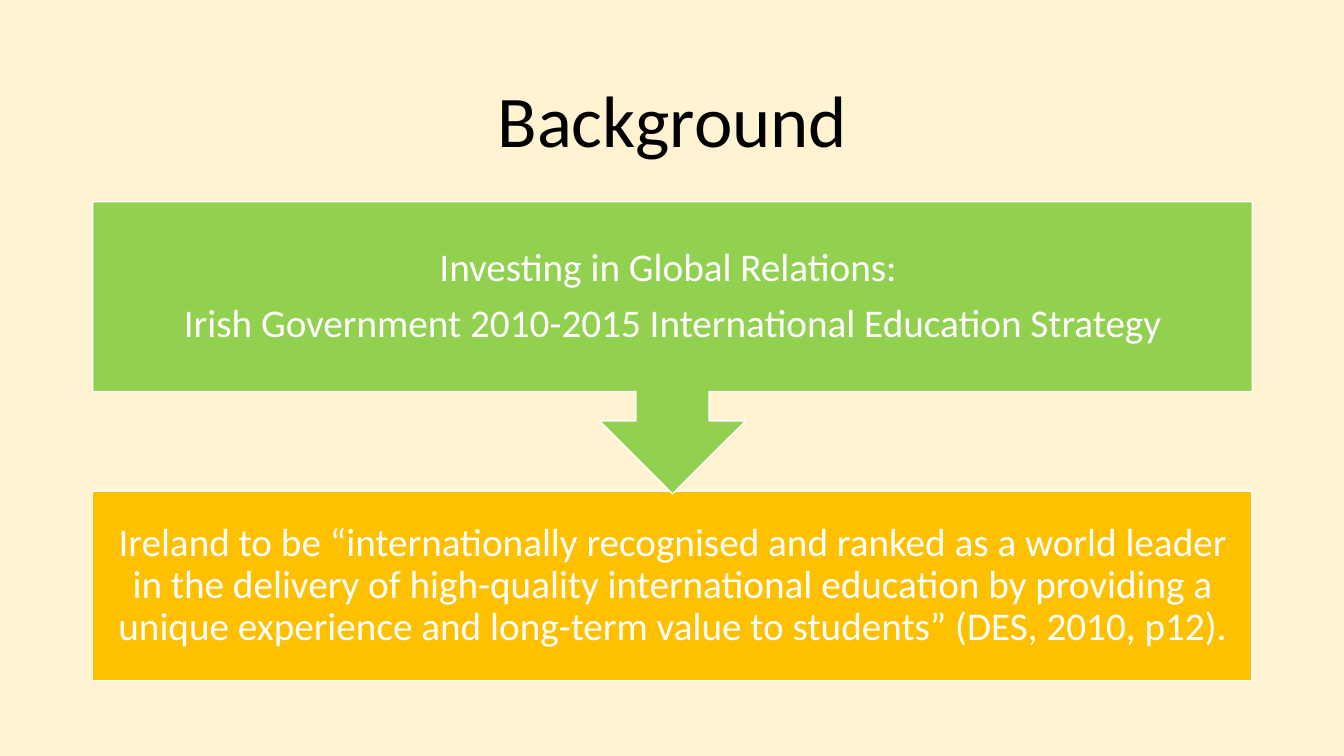
from pptx import Presentation
from pptx.dml.color import RGBColor
from pptx.enum.shapes import MSO_SHAPE as Shape
from pptx.enum.text import MSO_ANCHOR as Anchor, PP_ALIGN as Align
from pptx.util import Inches, Pt

FONT = "Calibri"
LEFT, WIDTH = 0.92, 11.5
STRATEGY_TOP, GOAL_TOP = 2, 4.87
PANEL_HEIGHT, CALLOUT_HEIGHT = 1.88, 2.9
CREAM, GREEN, AMBER = "FFF3D1", "92D050", "FFC000"
BLACK, WHITE = "000000", "FFFFFF"

STRATEGY = [
    "Investing in Global Relations: ",
    "Irish Government 2010-2015 International Education Strategy",
]
GOAL = [
    "Ireland to be “internationally recognised and ranked as a world leader "
    "in the delivery of high-quality international education by providing a "
    "unique experience and long-term value to students” (DES, 2010, p12). ",
]


def paint(fill, color):
    """Give a fill one solid colour."""
    fill.solid()
    fill.fore_color.rgb = RGBColor.from_string(color)


def add_panel(page, preset, top, height, color, rotation=0):
    """Add a full-width filled shape with a thin white outline."""
    panel = page.shapes.add_shape(
        preset, Inches(LEFT), Inches(top), Inches(WIDTH), Inches(height)
    )
    panel.shadow.inherit = False
    panel.rotation = rotation
    paint(panel.fill, color)
    paint(panel.line.fill, WHITE)
    panel.line.width = Pt(1)


def add_text(page, lines, top, height, size, color, inset, space_after=0):
    """Add a full-width box of centred paragraphs."""
    box = page.shapes.add_textbox(
        Inches(LEFT), Inches(top), Inches(WIDTH), Inches(height)
    )
    frame = box.text_frame
    frame.word_wrap = True
    frame.vertical_anchor = Anchor.MIDDLE
    frame.margin_left = frame.margin_right = Inches(inset)
    frame.margin_top = frame.margin_bottom = Inches(inset)
    for index, line in enumerate(lines):
        para = frame.add_paragraph() if index else frame.paragraphs[0]
        para.alignment = Align.CENTER
        para.line_spacing = 0.9
        para.space_after = Pt(space_after)
        span = para.add_run()
        span.text = line
        span.font.name = FONT
        span.font.size = Pt(size)
        paint(span.font.fill, color)


def main():
    """Build the slide and save it."""
    deck = Presentation()
    deck.slide_width, deck.slide_height = Inches(13.33), Inches(7.5)
    page = deck.slides.add_slide(deck.slide_layouts[6])
    paint(page.background.fill, CREAM)

    add_text(page, ["Background"], 0.61, 1.24, 52, BLACK, 0.05)
    add_panel(page, Shape.RECTANGLE, GOAL_TOP, PANEL_HEIGHT, AMBER)
    add_panel(
        page, Shape.UP_ARROW_CALLOUT, STRATEGY_TOP, CALLOUT_HEIGHT, GREEN, 180
    )
    for lines, top in ((GOAL, GOAL_TOP), (STRATEGY, STRATEGY_TOP)):
        add_text(page, lines, top, PANEL_HEIGHT, 28, WHITE, 0.22, 9.8)

    deck.save("out.pptx")


if __name__ == "__main__":
    main()
